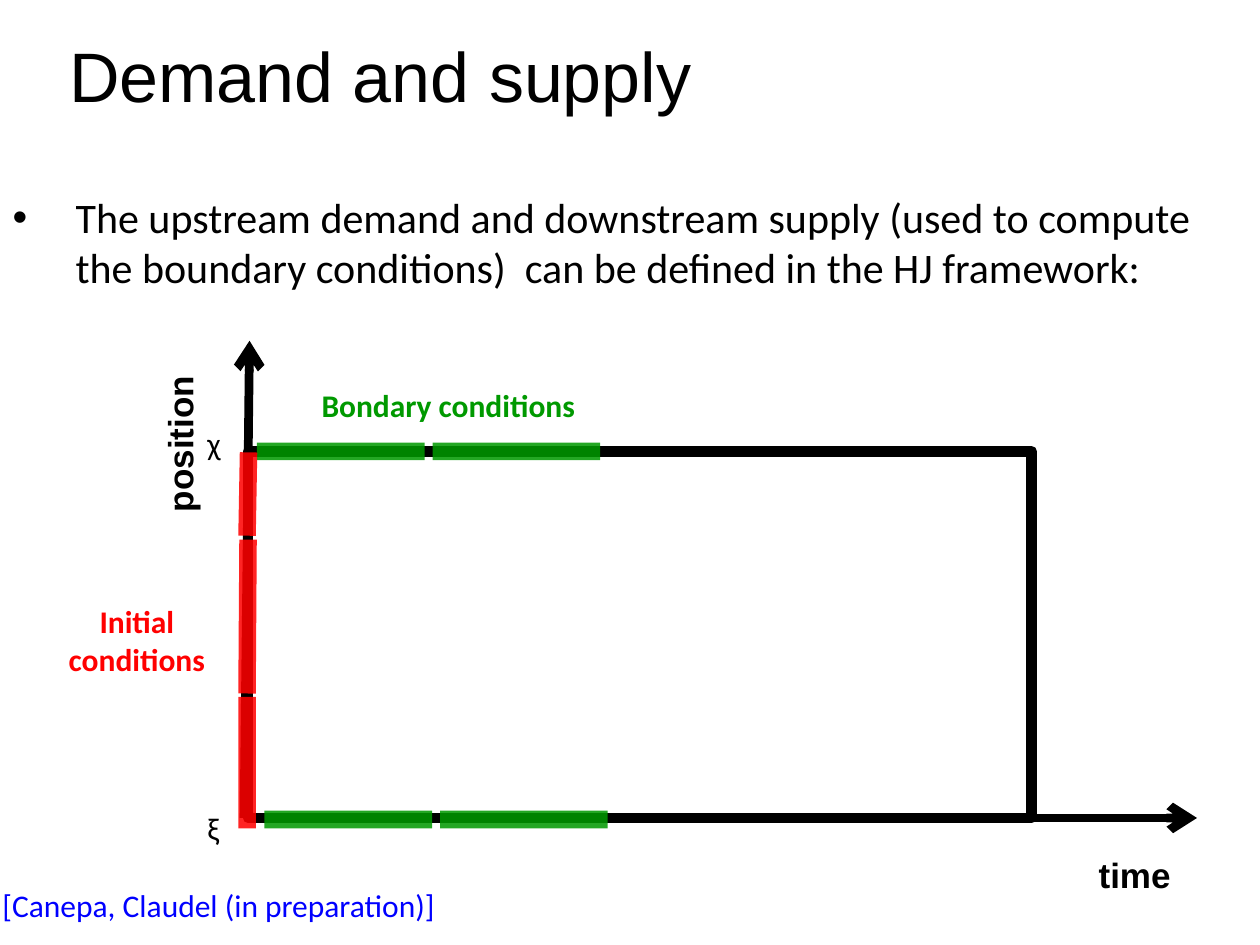
import pptx
import pptx.util
import pptx.dml.color
import pptx.enum.shapes
import pptx.enum.text
import pptx.oxml
import pptx.oxml.ns
import lxml.etree

Cm, Pt = pptx.util.Cm, pptx.util.Pt
Align = pptx.enum.text.PP_ALIGN
Anchor = pptx.enum.text.MSO_ANCHOR
BLACK, BLUE, GREEN, RED = "000000", "0000FF", "009900", "FF0000"


def paint(target, hue):
    """Set the colour of a font or line from a hex string."""
    if hasattr(target, "fill"):
        target.fill.solid()
    target.color.rgb = pptx.dml.color.RGBColor.from_string(hue)


def child(node, tag, **attrs):
    return lxml.etree.SubElement(node, pptx.oxml.ns.qn(tag), **attrs)


def place(shape, box):
    shape.left, shape.top, shape.width, shape.height = map(Cm, box)


def write(para, text, size, face, hue, bold=False):
    run = para.add_run()
    run.text = text
    run.font.size, run.font.name, run.font.bold = Pt(size), face, bold
    paint(run.font, hue)


def label(slide, box, text, size, face, hue, bold=False, align=Align.CENTER, turn=0):
    shape = slide.shapes.add_textbox(*map(Cm, box))
    shape.rotation = turn
    shape.text_frame.word_wrap = True
    para = shape.text_frame.paragraphs[0]
    para.alignment = align
    write(para, text, size, face, hue, bold)


def stroke(slide, start, end, width, hue, alpha=None, arrow=False):
    line = slide.shapes.add_connector(
        pptx.enum.shapes.MSO_CONNECTOR.STRAIGHT, *map(Cm, start + end))
    line.line.width = Pt(width)
    paint(line.line, hue)
    props = line._element.spPr
    child(props, "a:effectLst")
    ln = line.line._get_or_add_ln()
    if alpha:
        tint = ln.find(".//" + pptx.oxml.ns.qn("a:srgbClr"))
        child(tint, "a:alpha", val=str(alpha * 1000))
    if arrow:
        child(ln, "a:tailEnd", type="arrow")


def head(slide, box):
    title = slide.shapes.title
    place(title, box)
    frame = title.text_frame
    frame.auto_size = pptx.enum.text.MSO_AUTO_SIZE.NONE
    frame.vertical_anchor = Anchor.MIDDLE
    para = frame.paragraphs[0]
    para.alignment = Align.LEFT
    write(para, "Demand and supply", 40, "Arial", BLACK)


def body(slide, box):
    hold = slide.placeholders[1]
    place(hold, box)
    frame = hold.text_frame
    frame.auto_size = pptx.enum.text.MSO_AUTO_SIZE.NONE
    frame.vertical_anchor = Anchor.TOP
    para = frame.paragraphs[0]
    para.space_before = Pt(0)
    props = para._p.get_or_add_pPr()
    props.set("marL", str(Cm(1.27)))
    props.set("indent", str(Cm(-1.27)))
    child(props, "a:buFont", typeface="Arial")
    child(props, "a:buChar", char="•")
    write(para, "The upstream demand and downstream supply (used to compute "
          "the boundary conditions)  can be defined in the HJ framework:",
          24, "Calibri", BLACK)


def graph(slide, box):
    x, y, wide, high = box

    # Domain
    rect = slide.shapes.add_shape(
        pptx.enum.shapes.MSO_SHAPE.RECTANGLE, *map(Cm, box))
    rect.shadow.inherit = False
    rect.fill.background()
    rect.line.width = Pt(6)
    paint(rect.line, BLACK)
    child(rect.line._get_or_add_ln(), "a:round")

    # Axes
    base = y + high
    stroke(slide, (x - 0.05, base), (x + 19.13, base), 5, BLACK, arrow=True)
    stroke(slide, (x - 0.08, base), (x + 0.03, y - 2.23), 5, BLACK, arrow=True)

    # Boundary conditions: two pieces on each edge
    for left, row in ((x + 0.18, y), (x + 0.33, base + 0.03)):
        for i in range(2):
            at = left + i * 3.54
            stroke(slide, (at, row), (at + 3.38, row), 10, GREEN, 85)

    # Initial conditions
    for top, end, lean in ((0.02, 1.7, 0.03), (1.78, 4.88, 0.02), (4.95, 7.6, 0)):
        stroke(slide, (x - 0.02 + lean, y + top), (x - 0.02, y + end), 10, RED, 85)

    # Labels
    label(slide, (x + 1.07, y - 1.45, 5.94, 1.02), "Bondary conditions",
          18, "Calibri", GREEN, True)
    label(slide, (x - 4.16, y + 2.92, 3.84, 1.8), "Initial conditions",
          18, "Calibri", RED, True)
    label(slide, (x + wide + 0.87, base + 0.6, 2.41, 1.12), "time",
          20, "Arial", BLACK, True)
    label(slide, (x - 3.2, y - 0.71, 3.66, 1.12), "position",
          20, "Arial", BLACK, True, turn=270)
    for text, row in (("χ", y - 0.67), ("ξ", base - 0.31)):
        label(slide, (x - 1.07, row, 1.93, 1.02), text,
              18, "Calibri", BLACK, align=Align.LEFT)


def source(slide, box):
    label(slide, box, "[Canepa, Claudel (in preparation)]",
          18, "Calibri", BLUE, align=Align.LEFT)


def main():
    deck = pptx.Presentation()
    deck.slide_width, deck.slide_height = Cm(25.4), Cm(19.05)
    slide = deck.slides.add_slide(deck.slide_layouts[1])
    head(slide, (1.14, -0.08, 20.32, 3.18))
    body(slide, (0, 3.73, 24.51, 2.31))
    graph(slide, (5, 9.1, 15.8, 7.39))
    source(slide, (-0.2, 17.73, 26.47, 1.02))
    deck.save("out.pptx")


if __name__ == "__main__":
    main()
